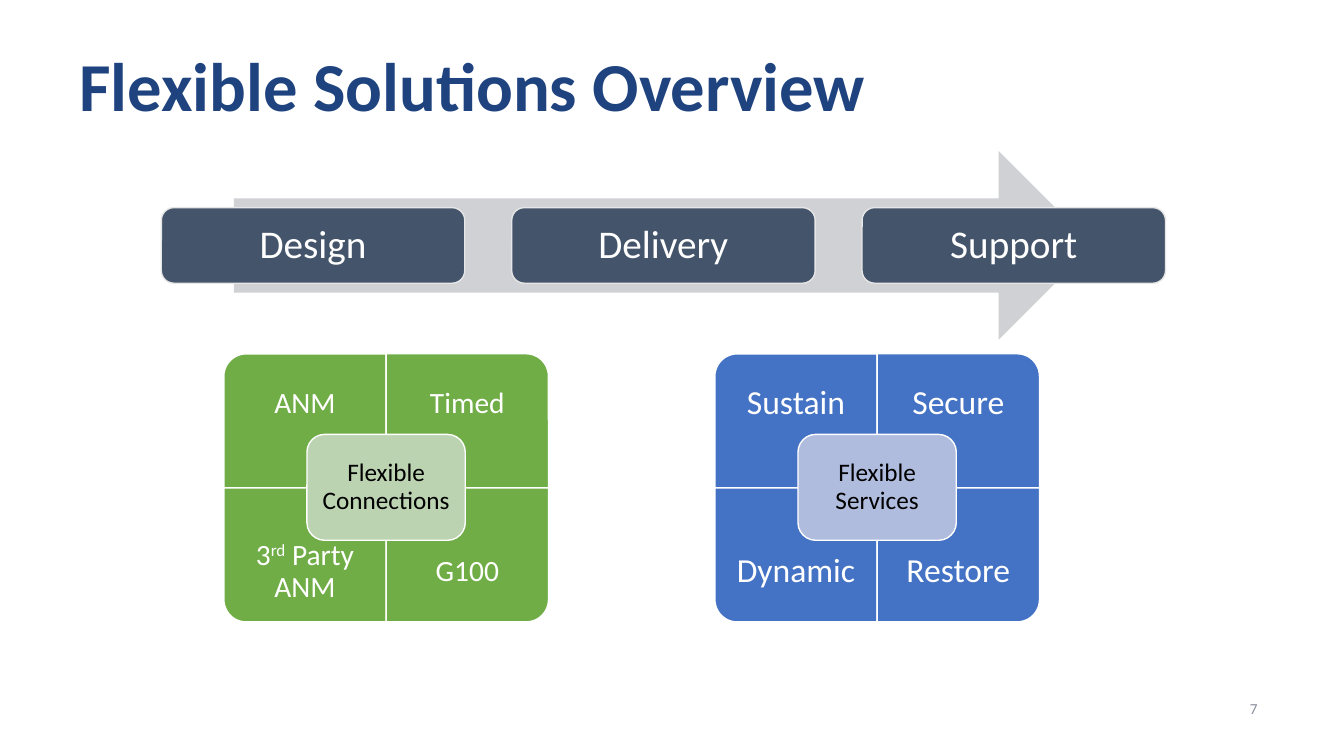
"""Build the Flexible Solutions Overview slide."""
from pptx import Presentation
from pptx.dml.color import RGBColor
from pptx.enum.shapes import MSO_SHAPE as Shape
from pptx.enum.text import MSO_ANCHOR as Anchor, PP_ALIGN as Align
from pptx.util import Inches, Pt


def add_panel(kind, left, top, width, height, fill, line=None, rotation=0):
    shape = slide.shapes.add_shape(
        kind, Inches(left), Inches(top), Inches(width), Inches(height))
    shape.shadow.inherit = False
    shape.rotation = rotation
    shape.fill.solid()
    shape.fill.fore_color.rgb = RGBColor.from_string(fill)
    if line:
        shape.line.color.rgb = RGBColor.from_string(line)
        shape.line.width = Pt(1)
    else:
        shape.line.fill.background()


def add_text(parts, left, top, width, height, size, color="FFFFFF",
             inset=0.1, align=Align.CENTER, bold=False):
    box = slide.shapes.add_textbox(
        Inches(left), Inches(top), Inches(width), Inches(height))
    frame = box.text_frame
    frame_format = {"word_wrap": True, "vertical_anchor": Anchor.MIDDLE}
    for side in ("left", "right", "top", "bottom"):
        frame_format[f"margin_{side}"] = Inches(inset)
    for name, value in frame_format.items():
        setattr(frame, name, value)
    paragraph = frame.paragraphs[0]
    paragraph.alignment = align
    paragraph.line_spacing = 0.9
    font_format = {"name": "Calibri", "size": Pt(size), "bold": bold}
    for index, part in enumerate(parts):
        run = paragraph.add_run()
        run.text = part
        for name, value in font_format.items():
            setattr(run.font, name, value)
        run.font.color.rgb = RGBColor.from_string(color)
        if index == 1:
            run._r.get_or_add_rPr().set("baseline", "30000")


presentation = Presentation()
presentation.slide_width = Inches(13.33)
presentation.slide_height = Inches(7.5)
slide = presentation.slides.add_slide(presentation.slide_layouts[6])

add_text(["Flexible Solutions Overview"], 0.69, 0.65, 11.86, 0.48, 49,
         "1F437F", inset=0.1, align=Align.LEFT, bold=True)
add_text(["7"], 0.69, 6.93, 11.88, 0.22, 10.9, "898D9E", align=Align.RIGHT)

add_panel(Shape.RIGHT_ARROW, 2.32, 1.5, 8.52, 1.87, "CFD1D4")
for index, stage in enumerate(["Design", "Delivery", "Support"]):
    left = 1.6 + index * 3.475
    add_panel(Shape.ROUNDED_RECTANGLE, left, 2.06, 3.01, 0.75, "44546A", "E7E6E6")
    add_text([stage], left + 0.04, 2.1, 2.93, 0.67, 28, inset=0.12)

tile_width, tile_height, label_height = 1.61, 1.33, 0.99
matrix_top = 3.51
rotations = [270, 0, 180, 90]
matrices = [
    (2.22, "70AD47", "BBD3B1", 21, 0.16, "Flexible Connections",
     [["ANM"], ["Timed"], ["3", "rd", " Party ANM"], ["G100"]]),
    (7.09, "4472C4", "B0BCDE", 24, 0.19, "Flexible Services",
     [["Sustain"], ["Secure"], ["Dynamic"], ["Restore"]]),
]
for matrix_left, fill, center_fill, size, inset, center, labels in matrices:
    for index, (label, rotation) in enumerate(zip(labels, rotations)):
        row, column = divmod(index, 2)
        left = matrix_left + column * tile_width
        top = matrix_top + row * tile_height
        width, height = tile_width, tile_height
        if rotation % 180:
            width, height = height, width
        add_panel(Shape.ROUND_1_RECTANGLE, left + (tile_width - width) / 2,
                  top + (tile_height - height) / 2, width, height,
                  fill, "FFFFFF", rotation)
        label_top = top + row * (tile_height - label_height)
        add_text(label, left, label_top, tile_width, label_height, size, inset=inset)
    center_left = matrix_left + 0.825
    add_panel(Shape.ROUNDED_RECTANGLE, center_left, 4.31, 1.57, 1.05,
              center_fill, "FFFFFF")
    add_text([center], center_left + 0.05, 4.36, 1.47, 0.95, 18, "000000", inset=0.07)

presentation.save("out.pptx")
